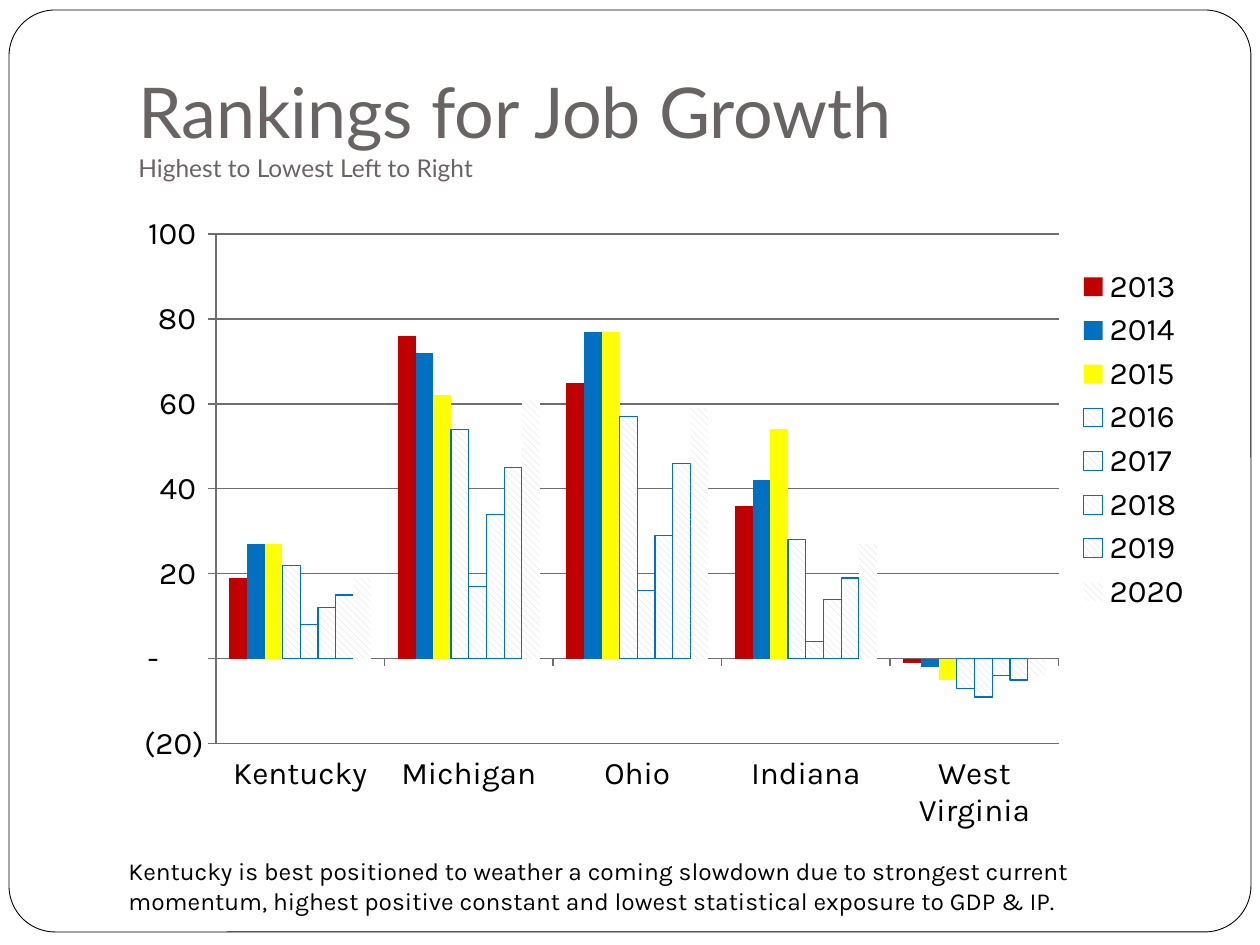
from dataclasses import dataclass

from lxml import etree
from pptx import Presentation
from pptx import util as u
from pptx.chart.data import CategoryChartData
from pptx.dml.color import RGBColor
from pptx.enum import chart as ch, dml, shapes, text

PX = u.Inches(1) // 126
CHART_NS = "http://schemas.openxmlformats.org/drawingml/2006/chart"


@dataclass(frozen=True)
class Theme:
    heading_font: str = "Lato"
    body_font: str = "Karla"
    title_size: int = 40
    note_size: int = 14
    chart_size: int = 18
    white: str = "FFFFFF"
    black: str = "000000"
    heading: str = "696464"
    axis: str = "6E6E6E"
    hatch: str = "D9D9D9"
    red: str = "C00000"
    blue: str = "0070C0"
    yellow: str = "FFFF00"


THEME = Theme()
STATES = ["Kentucky", "Michigan", "Ohio", "Indiana", "West Virginia"]
GROWTH = {
    "2013": [19, 76, 65, 36, -1],
    "2014": [27, 72, 77, 42, -2],
    "2015": [27, 62, 77, 54, -5],
    "2016": [22, 54, 57, 28, -7],
    "2017": [8, 17, 16, 4, -9],
    "2018": [12, 34, 29, 14, -4],
    "2019": [15, 45, 46, 19, -5],
    "2020": [19, 61, 59, 27, -4],
}
SOLID_YEARS = {"2013": THEME.red, "2014": THEME.blue, "2015": THEME.yellow}
UNLINED_HATCH = "2020"
NOTE = (
    "Kentucky is best positioned to weather a coming slowdown due to strongest "
    "current momentum, highest positive constant and lowest statistical exposure "
    "to GDP & IP."
)


def rgb(color):
    return RGBColor.from_string(color)


def px(*lengths):
    return [length * PX for length in lengths]


def style_font(font, name, color, size=None):
    font.name = name
    font.color.rgb = rgb(color)
    if size:
        font.size = u.Pt(size)


def style_line(line, color, width):
    line.color.rgb = rgb(color)
    line.width = u.Pt(width)


def add_frame(page):
    frame = page.shapes.add_shape(
        shapes.MSO_SHAPE.ROUNDED_RECTANGLE, *px(9, 10, 1242, 922))
    frame.adjustments[0] = 0.05
    frame.shadow.inherit = False
    frame.fill.solid()
    frame.fill.fore_color.rgb = rgb(THEME.white)
    style_line(frame.line, THEME.black, 0.5)


def add_text_box(page, place, anchor):
    """Add a wrapping text box and return its first paragraph."""
    frame = page.shapes.add_textbox(*px(*place)).text_frame
    frame.word_wrap = True
    frame.vertical_anchor = anchor
    return frame, frame.paragraphs[0]


def add_title(page):
    frame, para = add_text_box(page, (126, 38, 1071, 157), text.MSO_ANCHOR.BOTTOM)
    frame.margin_bottom = u.Inches(0.1)
    style_font(para.font, THEME.heading_font, THEME.heading)
    heading = para.add_run()
    heading.text = "Rankings for Job Growth"
    heading.font.size = u.Pt(THEME.title_size)
    para.add_line_break()
    subtitle = para.add_run()
    subtitle.text = "Highest to Lowest Left to Right"
    subtitle.font.size = u.Pt(THEME.note_size)


def add_note(page):
    _, para = add_text_box(page, (116, 850, 1092, 72), text.MSO_ANCHOR.TOP)
    para.text = NOTE
    style_font(para.font, THEME.body_font, THEME.black, THEME.note_size)


def make_layout(x, y, w, h, inner=False):
    """Build a manual chart layout from fractions of the chart area."""
    layout = etree.Element(f"{{{CHART_NS}}}layout")
    manual = etree.SubElement(layout, f"{{{CHART_NS}}}manualLayout")
    settings = {"layoutTarget": "inner"} if inner else {}
    settings |= {"xMode": "edge", "yMode": "edge", "x": x, "y": y, "w": w, "h": h}
    for tag, value in settings.items():
        etree.SubElement(manual, f"{{{CHART_NS}}}{tag}", val=str(value))
    return layout


def drop_layout(element):
    for layout in element.findall(f"{{{CHART_NS}}}layout"):
        element.remove(layout)


def style_series(series):
    fill = series.format.fill
    series.invert_if_negative = False
    if series.name in SOLID_YEARS:
        fill.solid()
        fill.fore_color.rgb = rgb(SOLID_YEARS[series.name])
        return
    fill.patterned()
    fill.pattern = dml.MSO_PATTERN.WIDE_DOWNWARD_DIAGONAL
    fill.fore_color.rgb = rgb(THEME.hatch)
    fill.back_color.rgb = rgb(THEME.white)
    if series.name != UNLINED_HATCH:
        style_line(series.format.line, THEME.blue, 0.75)


def style_axes(chart):
    for axis in (chart.category_axis, chart.value_axis):
        axis.major_tick_mark = ch.XL_TICK_MARK.OUTSIDE
        axis.minor_tick_mark = ch.XL_TICK_MARK.NONE
        style_line(axis.format.line, THEME.axis, 0.75)
    chart.category_axis.tick_label_position = ch.XL_TICK_LABEL_POSITION.LOW

    values = chart.value_axis
    values.minimum_scale, values.maximum_scale, values.major_unit = -20, 100, 20
    values.has_major_gridlines = True
    style_line(values.major_gridlines.format.line, THEME.axis, 0.75)
    labels = values.tick_labels
    labels.number_format = r'_(* #,##0_);_(* \(#,##0\);_(* "-"??_);_('
    labels.number_format_is_linked = False


def add_legend(chart):
    chart.has_legend = True
    legend = chart.legend
    legend.position = ch.XL_LEGEND_POSITION.RIGHT
    legend.include_in_layout = False
    element = legend._element
    drop_layout(element)
    position = element.find(f"{{{CHART_NS}}}legendPos")
    position.addnext(make_layout(0.89, 0.1, 0.11, 0.57))


def add_growth_chart(page):
    data = CategoryChartData()
    data.categories = STATES
    for year, values in GROWTH.items():
        data.add_series(year, values)
    chart = page.shapes.add_chart(
        ch.XL_CHART_TYPE.COLUMN_CLUSTERED, *px(126, 199, 1071, 630), data).chart
    chart.has_title = False
    style_font(chart.font, THEME.body_font, THEME.black, THEME.chart_size)

    plot = chart.plots[0]
    plot.gap_width = 150
    plot.overlap = 0
    plot.vary_by_categories = False
    for series in plot.series:
        style_series(series)
    style_axes(chart)
    add_legend(chart)

    area = chart._chartSpace.find(f".//{{{CHART_NS}}}plotArea")
    drop_layout(area)
    area.insert(0, make_layout(0.084, 0.056, 0.787, 0.816, inner=True))


def main():
    deck = Presentation()
    deck.slide_width, deck.slide_height = u.Inches(10), u.Inches(7.5)
    page = deck.slides.add_slide(deck.slide_layouts[6])
    add_frame(page)
    add_title(page)
    add_growth_chart(page)
    add_note(page)
    deck.save("out.pptx")


if __name__ == "__main__":
    main()
